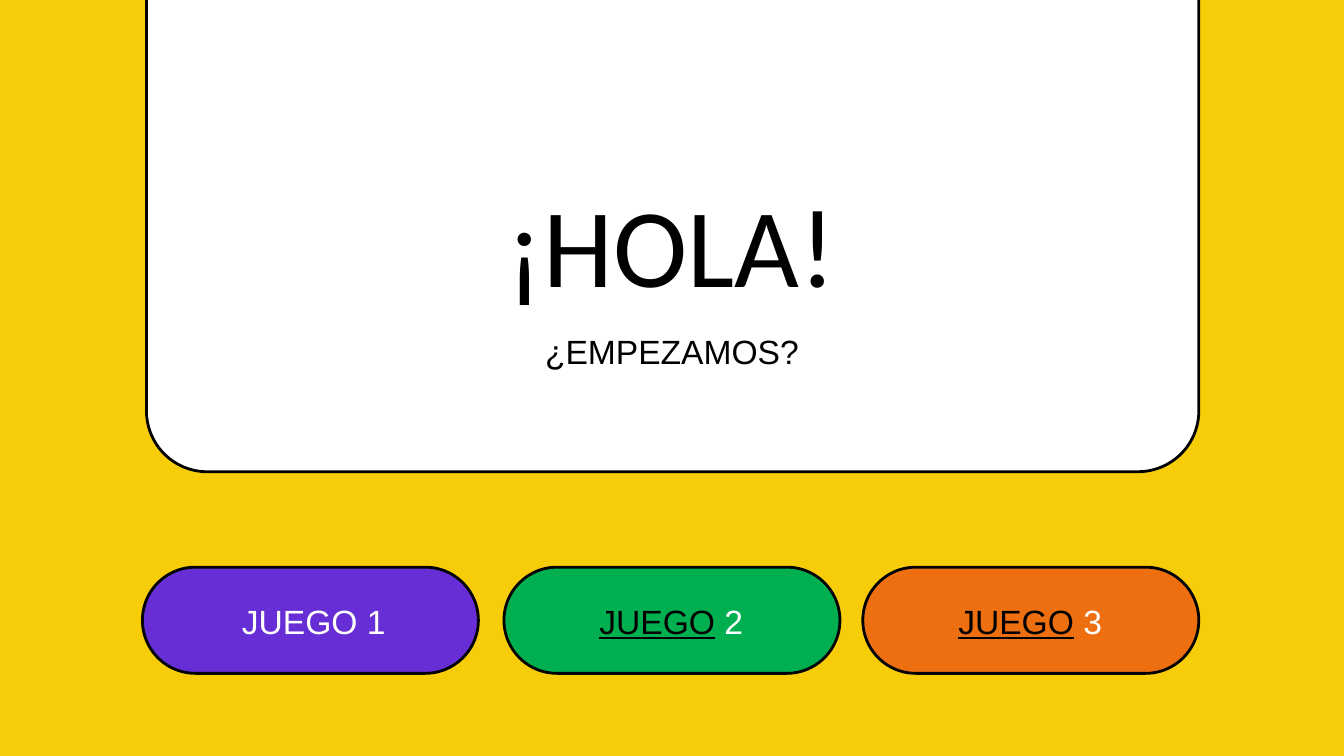
from pptx import Presentation
from pptx.dml.color import RGBColor
from pptx.enum.shapes import MSO_SHAPE
from pptx.enum.text import MSO_ANCHOR, MSO_AUTO_SIZE, PP_ALIGN
from pptx.util import Inches, Pt

ROUND = MSO_SHAPE.ROUNDED_RECTANGLE
TOP, BOTTOM = MSO_ANCHOR.TOP, MSO_ANCHOR.BOTTOM
CENTER = PP_ALIGN.CENTER
NO_FIT = MSO_AUTO_SIZE.NONE

YELLOW = RGBColor(0xF7, 0xCC, 0x09)
PURPLE = RGBColor(0x67, 0x2E, 0xD6)
GREEN = RGBColor(0x00, 0xB0, 0x50)
ORANGE = RGBColor(0xEE, 0x6F, 0x10)
BLACK = RGBColor(0, 0, 0)
WHITE = RGBColor(0xFF, 0xFF, 0xFF)

# button left, label left, fill
GAMES = [(1.06, 1.32, PURPLE), (3.75, 3.98, GREEN), (6.42, 6.65, ORANGE)]


def add_panel(slide, box, fill, radius):
    panel = slide.shapes.add_shape(ROUND, *map(Inches, box))
    panel.adjustments[0] = radius
    panel.shadow.inherit = False
    panel.fill.solid()
    panel.fill.fore_color.rgb = fill
    panel.line.color.rgb = BLACK
    panel.line.width = Pt(1.5)
    return panel


def add_text(para, text, size=18, font="Arial", color=BLACK, underline=False):
    run = para.add_run()
    run.text = text
    run.font.size = Pt(size)
    run.font.name = font
    run.font.color.rgb = color
    run.font.underline = underline


def set_frame(shape, anchor):
    """Prepare the text frame and return its centred first paragraph."""
    frame = shape.text_frame
    frame.word_wrap = True
    frame.auto_size = NO_FIT
    frame.vertical_anchor = anchor
    frame.margin_left = frame.margin_right = Inches(0.1)
    frame.margin_top = frame.margin_bottom = Inches(0.1)
    para = frame.paragraphs[0]
    para.alignment = CENTER
    para.space_before = Pt(0)
    return para


def fill_holder(holder, box, anchor, text, **style):
    holder.left, holder.top, holder.width, holder.height = map(Inches, box)
    add_text(set_frame(holder, anchor), text, **style)


def add_label(slide, left, number):
    """Label a game; all but the first have the word underlined."""
    box = slide.shapes.add_textbox(*map(Inches, (left, 4.37, 2.03, 0.51)))
    para = set_frame(box, TOP)
    if number == 1:
        add_text(para, "JUEGO 1", color=WHITE)
    else:
        add_text(para, "JUEGO", underline=True)
        add_text(para, f" {number}", color=WHITE)


def main():
    deck = Presentation()
    deck.slide_width = Inches(10)
    deck.slide_height = deck.slide_width * 9 // 16
    slide = deck.slides.add_slide(deck.slide_layouts[0])
    slide.background.fill.solid()
    slide.background.fill.fore_color.rgb = YELLOW

    title, subtitle = slide.placeholders
    card = add_panel(slide, (1.09, -0.68, 7.83, 4.19), WHITE, 0.108)
    title.element.addprevious(card.element)  # card goes behind the text
    fill_holder(title, (1.21, 1.41, 7.57, 1), BOTTOM, "¡HOLA!",
                size=60, font="Calibri")
    fill_holder(subtitle, (2.79, 2.36, 4.42, 0.52), TOP, "¿EMPEZAMOS?")

    for number, (left, label, fill) in enumerate(GAMES, 1):
        add_panel(slide, (left, 4.22, 2.5, 0.79), fill, 0.5)
        add_label(slide, label, number)

    deck.save("out.pptx")


if __name__ == "__main__":
    main()
